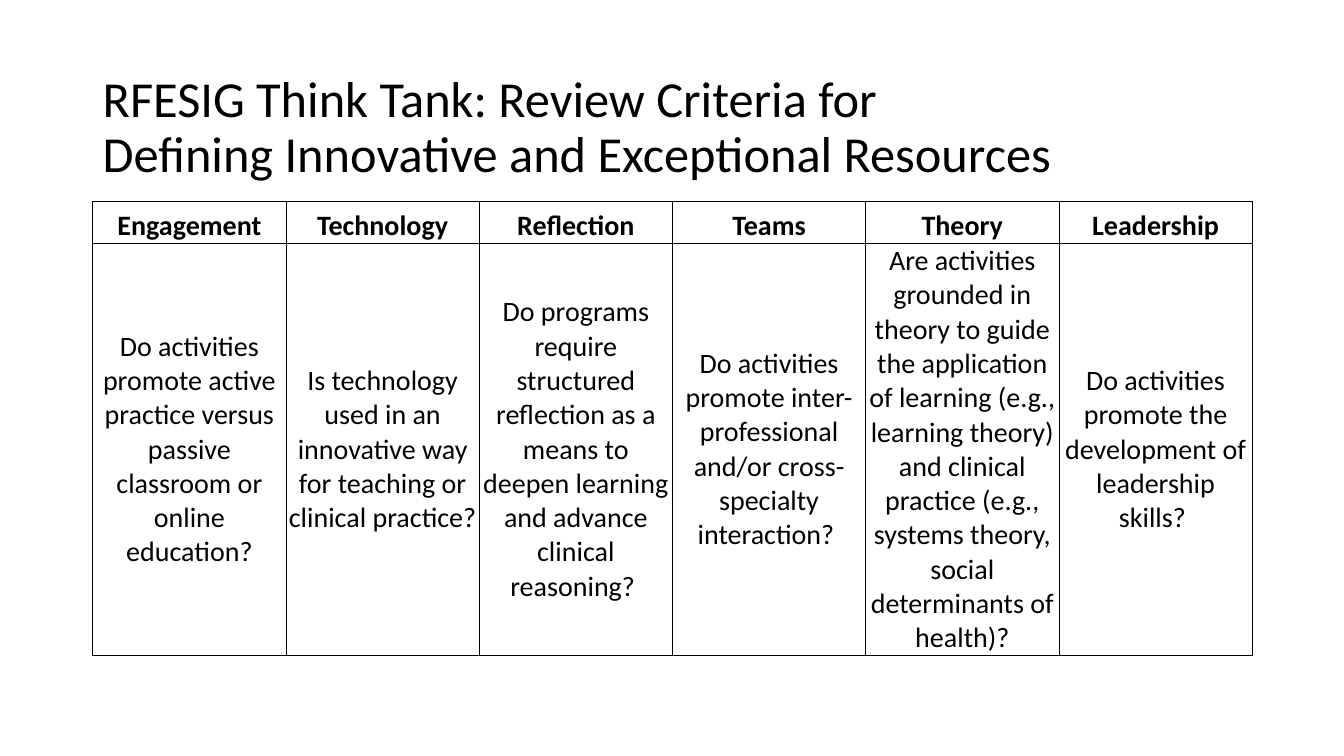
"""Build a slide with a table of review criteria."""
from lxml import etree
from pptx import Presentation, util as u
from pptx.dml.color import RGBColor
from pptx.enum import text
from pptx.oxml import ns

BLACK, WHITE = "000000", "FFFFFF"
TITLE = ["RFESIG Think Tank: Review Criteria for",
         "Defining Innovative and Exceptional Resources"]
ITEMS = {
    "Engagement": "Do activities promote active practice versus passive "
                  "classroom or online education?",
    "Technology": "Is technology used in an innovative way for teaching or "
                  "clinical practice? ",
    "Reflection": "Do programs require structured reflection as a means to "
                  "deepen learning and advance clinical reasoning? ",
    "Teams": "Do activities promote inter-professional and/or "
             "cross-specialty interaction? ",
    "Theory": "Are activities grounded in theory to guide the application of "
              "learning (e.g., learning theory) and clinical practice (e.g., "
              "systems theory, social determinants of health)?",
    "Leadership": "Do activities promote the development of leadership "
                  "skills? ",
}


def tint(code):
    """Turn a hex string into a colour."""
    return RGBColor.from_string(code)


def apply(obj, vals):
    """Set each named attribute on an object."""
    for name, val in vals.items():
        setattr(obj, name, val)


def write(para, words, size, bold=False):
    """Add one styled run to a paragraph."""
    run = para.add_run()
    run.text = words
    apply(run.font, {"name": "Calibri", "size": u.Pt(size), "bold": bold})
    run.font.color.rgb = tint(BLACK)


def edge(cell):
    """Draw a thin line on all four sides of a cell."""
    props = cell._tc.get_or_add_tcPr()
    for spot, side in enumerate(("lnL", "lnR", "lnT", "lnB")):
        line = etree.Element(ns.qn(f"a:{side}"), w=str(u.Pt(0.5)))
        fill = etree.SubElement(line, ns.qn("a:solidFill"))
        etree.SubElement(fill, ns.qn("a:srgbClr"), val=BLACK)
        props.insert(spot, line)


def head(slide):
    """Add the two-line title."""
    box = slide.shapes.add_textbox(u.Inches(0.92), u.Inches(0.55),
                                   u.Inches(11.82), u.Inches(1.45))
    frame = box.text_frame
    apply(frame, {"word_wrap": True,
                  "vertical_anchor": text.MSO_ANCHOR.MIDDLE})
    for i, words in enumerate(TITLE):
        para = frame.add_paragraph() if i else frame.paragraphs[0]
        para.line_spacing = 0.9
        write(para, words, 36)


def fill(cell, words, bold):
    """Fill and style one table cell."""
    anchor = text.MSO_ANCHOR.BOTTOM if bold else text.MSO_ANCHOR.MIDDLE
    thin = u.Inches(0.01)
    apply(cell, {"vertical_anchor": anchor, "margin_left": thin,
                 "margin_right": thin, "margin_top": thin,
                 "margin_bottom": 0})
    cell.fill.solid()
    cell.fill.fore_color.rgb = tint(WHITE)
    edge(cell)
    para = cell.text_frame.paragraphs[0]
    para.alignment = text.PP_ALIGN.CENTER
    write(para, words, 20, bold)


def grid(slide):
    """Add the criteria table, one column for each criterion."""
    table = slide.shapes.add_table(2, len(ITEMS), u.Inches(0.92), u.Inches(2),
                                   u.Inches(11.5), u.Inches(4.5)).table
    for row, high in zip(table.rows, (0.41, 4.09)):
        row.height = u.Inches(high)
    for col, (name, quest) in enumerate(ITEMS.items()):
        fill(table.cell(0, col), name, True)
        fill(table.cell(1, col), quest, False)


def main():
    """Build and save the slide."""
    deck = Presentation()
    apply(deck, {"slide_width": u.Inches(13.33),
                 "slide_height": u.Inches(7.5)})
    slide = deck.slides.add_slide(deck.slide_layouts[6])
    head(slide)
    grid(slide)
    deck.save("out.pptx")


if __name__ == "__main__":
    main()
